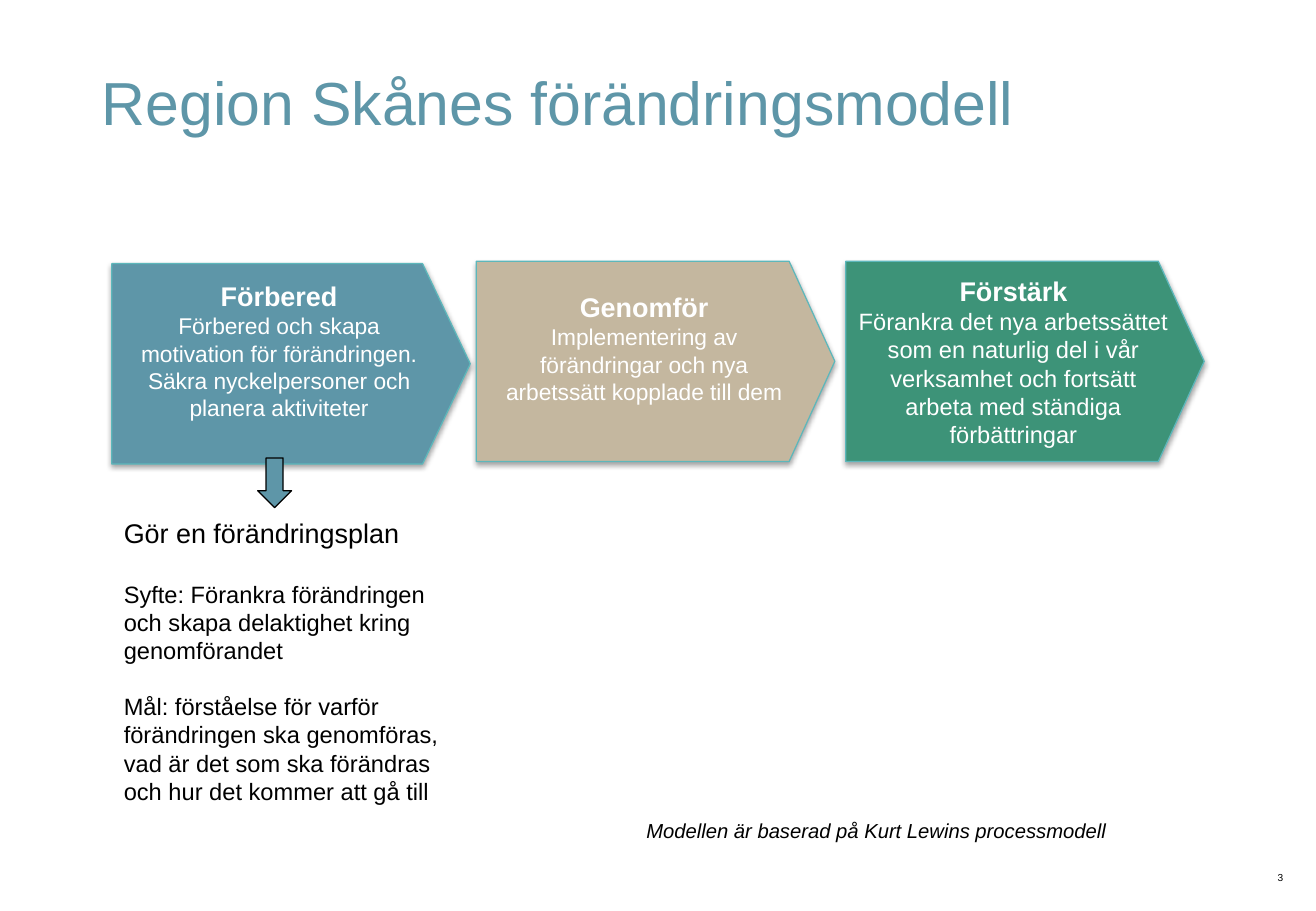
import pptx
import pptx.util
import pptx.dml.color
import pptx.enum.shapes
import pptx.enum.text
import pptx.oxml
from dataclasses import dataclass

TITLE = "Region Skånes förändringsmodell"
STEPS = [
    dict(head="Förbered", body="Förbered och skapa motivation för förändringen. "
         "Säkra nyckelpersoner och planera aktiviteter",
         left=92, top=217, fill="5E96A8", size=13.5, tip=0.238, foot=27),
    dict(head="Genomför", body="Implementering av förändringar och nya "
         "arbetssätt kopplade till dem",
         left=392, top=215, fill="C4B79F", size=13.5, tip=0.228, foot=27),
    dict(head="Förstärk", body="Förankra det nya arbetssättet som en naturlig del "
         "i vår verksamhet och fortsätt arbeta med ständiga förbättringar",
         left=696, top=215, fill="3D9378", size=14, tip=0.229, foot=5),
]
PLAN = [
    ("Gör en förändringsplan", 16, 0),
    ("Syfte: Förankra förändringen och skapa delaktighet kring genomförandet", 14, 18.4),
    ("Mål: förståelse för varför förändringen ska genomföras, vad är det som "
     "ska förändras och hur det kommer att gå till", 14, 16.1),
]
SOURCE = "Modellen är baserad på Kurt Lewins processmodell"
PAGE = "3"
STEP_W, STEP_H = 295, 165
SCALE = 9144


@dataclass(frozen=True)
class Theme:
    font: str = "Arial"
    blue: str = "5E96A8"
    edge: str = "5DB7BB"
    ink: str = "000000"
    white: str = "FFFFFF"
    title: float = 36
    head: float = 16
    note: float = 12
    page: float = 6
    line: float = 0.75


theme = Theme()
ALIGN = pptx.enum.text.PP_ALIGN
SHAPE = pptx.enum.shapes.MSO_SHAPE
SHADOW = (
    '<a:effectLst xmlns:a="http://schemas.openxmlformats.org/drawingml/2006/main">'
    '<a:outerShdw blurRad="39370" dist="22860" dir="5400000" rotWithShape="0">'
    '<a:srgbClr val="000000"><a:alpha val="35000"/></a:srgbClr>'
    '</a:outerShdw></a:effectLst>'
)


def px(num):
    return pptx.util.Emu(num * SCALE)


def rgb(code):
    return pptx.dml.color.RGBColor.from_string(code)


def write(frame, rows, color, align=ALIGN.LEFT):
    for num, (text, size, gap, bold, slant) in enumerate(rows):
        para = frame.add_paragraph() if num else frame.paragraphs[0]
        para.alignment = align
        if gap:
            para.space_before = pptx.util.Pt(gap)
        run = para.add_run()
        run.text = text
        font = run.font
        font.name = theme.font
        font.size = pptx.util.Pt(size)
        font.bold = bold
        font.italic = slant
        font.color.rgb = rgb(color)


def add_text(slide, area, rows, color, align=ALIGN.LEFT, wrap=True, inset=True):
    frame = slide.shapes.add_textbox(*map(px, area)).text_frame
    frame.word_wrap = wrap
    if not inset:
        frame.margin_left = frame.margin_right = 0
        frame.margin_top = frame.margin_bottom = 0
    write(frame, rows, color, align)


def add_form(slide, kind, area, fill, edge):
    form = slide.shapes.add_shape(kind, *map(px, area))
    form.shadow.inherit = False
    form.fill.solid()
    form.fill.fore_color.rgb = rgb(fill)
    form.line.color.rgb = rgb(edge)
    form.line.width = pptx.util.Pt(theme.line)
    return form


def add_step(slide, step):
    area = (step["left"], step["top"], STEP_W, STEP_H)
    form = add_form(slide, SHAPE.PENTAGON, area, step["fill"], theme.edge)
    form.adjustments[0] = step["tip"]
    props = form.element.spPr
    props.remove(props.find(pptx.oxml.ns.qn("a:effectLst")))
    props.append(pptx.oxml.parse_xml(SHADOW))
    frame = form.text_frame
    frame.word_wrap = True
    frame.vertical_anchor = pptx.enum.text.MSO_ANCHOR.MIDDLE
    frame.margin_bottom = px(step["foot"])
    rows = [(step["head"], theme.head, 0, True, False),
            (step["body"], step["size"], 0, False, False)]
    write(frame, rows, theme.white, ALIGN.CENTER)


def main():
    deck = pptx.Presentation()
    deck.slide_width, deck.slide_height = px(1083), px(750)
    slide = deck.slides.add_slide(deck.slide_layouts[6])
    add_text(slide, (1002, 717, 54, 10), [(PAGE, theme.page, 0, False, False)],
             theme.ink, ALIGN.RIGHT, inset=False)
    add_text(slide, (74, 48, 934, 145), [(TITLE, theme.title, 0, False, False)], theme.blue)
    add_text(slide, (522, 669, 405, 30), [(SOURCE, theme.note, 0, False, True)],
             theme.ink, wrap=False)
    plan = [(text, size, gap, False, False) for text, size, gap in PLAN]
    add_text(slide, (92, 420, STEP_W, 316), plan, theme.ink)
    for step in STEPS:
        add_step(slide, step)
    add_form(slide, SHAPE.DOWN_ARROW, (212, 377, 28, 41), theme.blue, theme.ink)
    deck.save("out.pptx")


if __name__ == "__main__":
    main()
